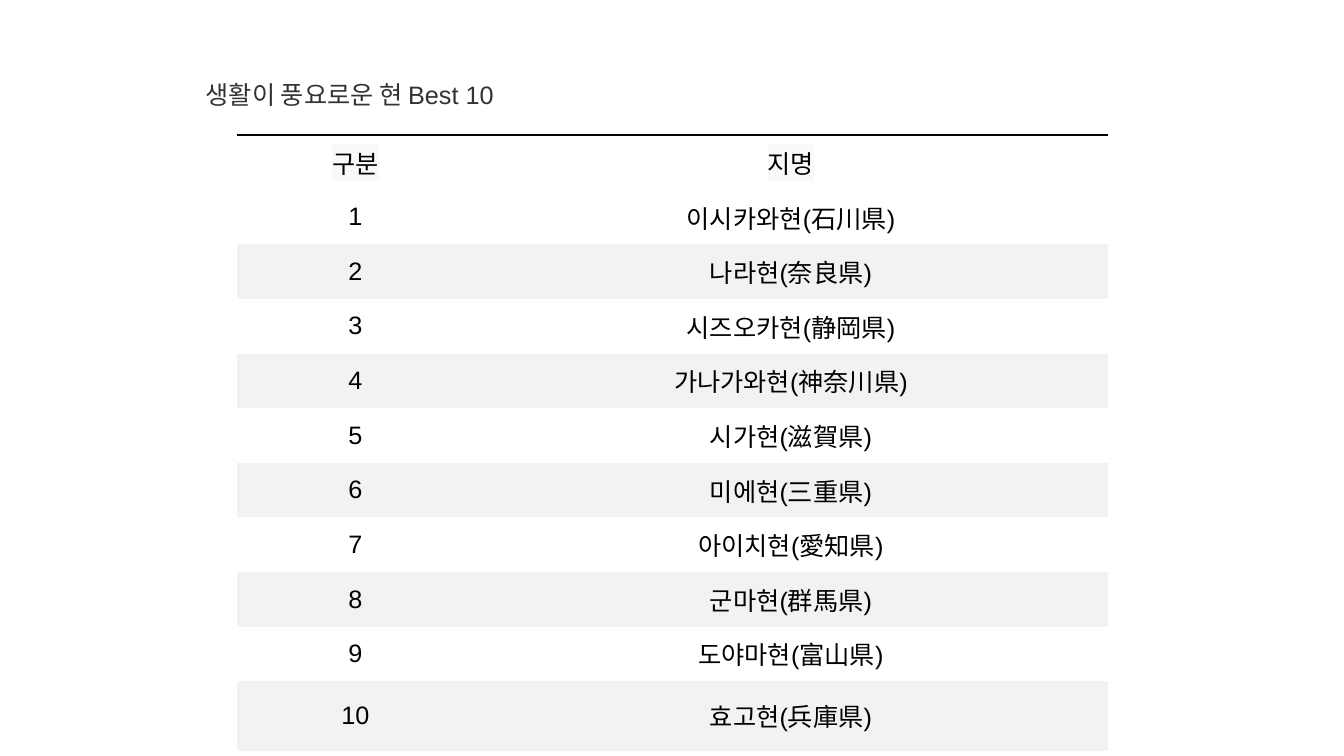
from dataclasses import dataclass

from lxml import etree
from pptx import Presentation
from pptx.dml.color import RGBColor
from pptx.enum.text import MSO_ANCHOR, MSO_AUTO_SIZE, PP_ALIGN
from pptx.oxml.ns import qn
from pptx.slide import Slide
from pptx.table import Table, _Cell
from pptx.text.text import _Paragraph, _Run
from pptx.util import Inches, Pt

CENTER, LEFT = PP_ALIGN.CENTER, PP_ALIGN.LEFT
MIDDLE, TOP = MSO_ANCHOR.MIDDLE, MSO_ANCHOR.TOP
FIXED_SIZE = MSO_AUTO_SIZE.NONE
TITLE_ONLY = 5
PLAIN_TABLE_STYLE = "{2D5ABB26-0587-4C30-8999-92F81FD0307C}"


@dataclass(frozen=True)
class Theme:
    font: str = "Arial"
    text_size: float = 18
    rule_width: float = 2.25
    heading: str = "333333"
    ink: str = "000000"
    band: str = "F2F2F2"
    header_highlight: str = "F9F9F9"


@dataclass(frozen=True)
class Prefecture:
    korean: str
    japanese: str

    def label(self) -> str:
        return f"{self.korean}({self.japanese})"


THEME = Theme()
HEADING = "생활이 풍요로운 현 Best 10"
COLUMN_LABELS = ("구분", "지명")
COLUMN_WIDTHS = (2.35, 6.29)
HEADER_HEIGHT, ODD_HEIGHT, EVEN_HEIGHT, LAST_HEIGHT = 0.42, 0.45, 0.4, 0.69
PREFECTURES = (
    Prefecture("이시카와현", "石川県"),
    Prefecture("나라현", "奈良県"),
    Prefecture("시즈오카현", "静岡県"),
    Prefecture("가나가와현", "神奈川県"),
    Prefecture("시가현", "滋賀県"),
    Prefecture("미에현", "三重県"),
    Prefecture("아이치현", "愛知県"),
    Prefecture("군마현", "群馬県"),
    Prefecture("도야마현", "富山県"),
    Prefecture("효고현", "兵庫県"),
)


def add_run(paragraph: _Paragraph, text: str, color: str) -> _Run:
    run = paragraph.add_run()
    run.text = text
    run.font.name = THEME.font
    run.font.size = Pt(THEME.text_size)
    run.font.color.rgb = RGBColor.from_string(color)
    return run


def highlight(run: _Run, color: str) -> None:
    properties = run.font._element
    marker = etree.Element(qn("a:highlight"))
    etree.SubElement(marker, qn("a:srgbClr"), val=color)
    properties.find(qn("a:solidFill")).addnext(marker)


def draw_top_rule(cell: _Cell) -> None:
    rule = etree.Element(qn("a:lnT"), w=str(Pt(THEME.rule_width)))
    fill = etree.SubElement(rule, qn("a:solidFill"))
    etree.SubElement(fill, qn("a:srgbClr"), val=THEME.ink)
    cell._tc.get_or_add_tcPr().insert(0, rule)


def fill_cell(cell: _Cell, text: str, banded: bool) -> _Run:
    cell.margin_left = cell.margin_right = Inches(0.1)
    cell.margin_top = cell.margin_bottom = Inches(0.09)
    cell.vertical_anchor = MIDDLE
    if banded:
        cell.fill.solid()
        cell.fill.fore_color.rgb = RGBColor.from_string(THEME.band)
    else:
        cell.fill.background()
    paragraph = cell.text_frame.paragraphs[0]
    paragraph.alignment = CENTER
    return add_run(paragraph, text, THEME.ink)


def place_heading(slide: Slide) -> None:
    heading = slide.shapes.title
    heading.left, heading.top = Inches(1.94), Inches(0.74)
    heading.width, heading.height = Inches(4.06), Inches(0.71)
    frame = heading.text_frame
    frame.word_wrap = True
    frame.auto_size = FIXED_SIZE
    frame.vertical_anchor = TOP
    paragraph = frame.paragraphs[0]
    paragraph.alignment = LEFT
    add_run(paragraph, HEADING, THEME.heading)


def row_height(rank: int) -> float:
    if rank == 0:
        return HEADER_HEIGHT
    if rank == len(PREFECTURES):
        return LAST_HEIGHT
    return ODD_HEIGHT if rank % 2 else EVEN_HEIGHT


def add_ranking_table(slide: Slide) -> Table:
    heights = [row_height(rank) for rank in range(len(PREFECTURES) + 1)]
    ranking = slide.shapes.add_table(
        len(heights), len(COLUMN_WIDTHS), Inches(2.35), Inches(1.34),
        Inches(sum(COLUMN_WIDTHS)), Inches(sum(heights)),
    ).table
    ranking.first_row = ranking.horz_banding = False
    ranking._tbl.tblPr.find(qn("a:tableStyleId")).text = PLAIN_TABLE_STYLE
    for column, width in zip(ranking.columns, COLUMN_WIDTHS):
        column.width = Inches(width)
    for row, height in zip(ranking.rows, heights):
        row.height = Inches(height)
    return ranking


def fill_ranking(ranking: Table) -> None:
    for column, label in enumerate(COLUMN_LABELS):
        cell = ranking.cell(0, column)
        highlight(fill_cell(cell, label, False), THEME.header_highlight)
        draw_top_rule(cell)
    for rank, prefecture in enumerate(PREFECTURES, start=1):
        for column, text in enumerate((str(rank), prefecture.label())):
            fill_cell(ranking.cell(rank, column), text, rank % 2 == 0)


def main() -> None:
    deck = Presentation()
    deck.slide_width, deck.slide_height = Inches(13.33), Inches(7.5)
    slide = deck.slides.add_slide(deck.slide_layouts[TITLE_ONLY])
    fill_ranking(add_ranking_table(slide))
    place_heading(slide)
    deck.save("out.pptx")


if __name__ == "__main__":
    main()
